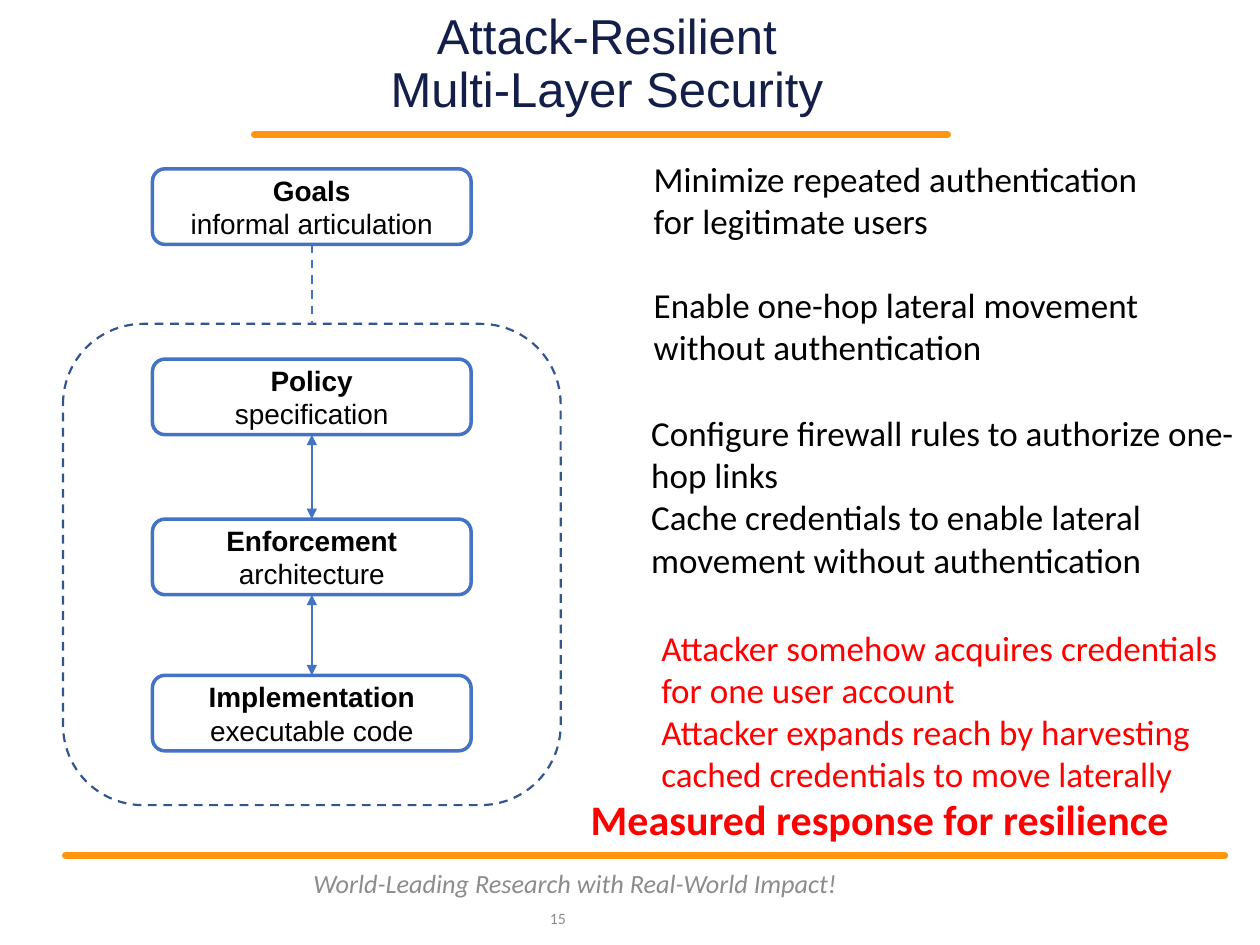
from itertools import pairwise

from lxml.etree import SubElement
from pptx import Presentation
from pptx.dml.color import RGBColor
from pptx.enum.dml import MSO_LINE
from pptx.enum.shapes import MSO_CONNECTOR, MSO_SHAPE
from pptx.enum.text import MSO_ANCHOR, PP_ALIGN
from pptx.oxml.ns import qn
from pptx.util import Inches, Pt

ORANGE = RGBColor(0xFF, 0x95, 0x0E)
NAVY = RGBColor(0x13, 0x1F, 0x49)
BLUE = RGBColor(0x44, 0x72, 0xC4)
DARK_BLUE = RGBColor(0x32, 0x54, 0x91)
GRAY = RGBColor(0x8C, 0x8C, 0x8C)
BLACK = RGBColor(0, 0, 0)
RED = RGBColor(0xFF, 0, 0)

LAYERS = [
    (1.34, "Goals", "informal articulation"),
    (2.85, "Policy", "specification"),
    (4.12, "Enforcement", "architecture"),
    (5.36, "Implementation", "executable code"),
]
NOTES = [
    (5.09, 1.2, 4.14, 0.77, BLACK,
     "Minimize repeated authentication for legitimate users"),
    (5.09, 2.2, 4.14, 0.77, BLACK,
     "Enable one-hop lateral movement without authentication"),
    (5.07, 3.22, 4.86, 1.45, BLACK,
     "Configure firewall rules to authorize one-hop links\n"
     "Cache credentials to enable lateral movement without authentication"),
    (5.15, 4.92, 4.63, 1.45, RED,
     "Attacker somehow acquires credentials for one user account\n"
     "Attacker expands reach by harvesting cached credentials to move laterally"),
]


def write(tf, text, size=20, font="Calibri", color=BLACK, bold=False, heading=False,
          italic=False, align=PP_ALIGN.LEFT, spacing=None):
    """Fill a text frame with one paragraph per line of text."""
    for i, line in enumerate(text.split("\n")):
        p = tf.add_paragraph() if i else tf.paragraphs[0]
        p.alignment = align
        if spacing:
            p.line_spacing = spacing
        r = p.add_run()
        r.text = line
        r.font.size = Pt(size)
        r.font.name = font
        r.font.color.rgb = color
        r.font.bold = bold or (heading and i == 0)
        r.font.italic = italic


class SlideBuilder:
    """Draws the slide's elements in one shared style."""

    def __init__(self, s):
        self.s = s

    def text(self, x, y, w, h, text, anchor=MSO_ANCHOR.TOP, wrap=True, inset=None, **style):
        """Add a text box."""
        sp = self.s.shapes.add_textbox(Inches(x), Inches(y), Inches(w), Inches(h))
        tf = sp.text_frame
        tf.word_wrap = wrap
        tf.vertical_anchor = anchor
        if inset is not None:
            tf.margin_left = tf.margin_right = tf.margin_top = tf.margin_bottom = Inches(inset)
        write(tf, text, **style)

    def box(self, x, y, w, h, color=BLUE, width=2, dash=None, text=None):
        """Add an unfilled rounded box."""
        sp = self.s.shapes.add_shape(
            MSO_SHAPE.ROUNDED_RECTANGLE, Inches(x), Inches(y), Inches(w), Inches(h))
        sp.shadow.inherit = False
        sp.fill.background()
        sp.line.color.rgb = color
        sp.line.width = Pt(width)
        sp.line.dash_style = dash
        if text:
            sp.text_frame.word_wrap = True
            sp.text_frame.vertical_anchor = MSO_ANCHOR.MIDDLE
            write(sp.text_frame, text, size=16, font="Arial", heading=True,
                  align=PP_ALIGN.CENTER)
        return sp

    def line(self, x1, y1, x2, y2, color=BLUE, width=1.25, dash=None):
        """Add a straight line."""
        c = self.s.shapes.add_connector(
            MSO_CONNECTOR.STRAIGHT, Inches(x1), Inches(y1), Inches(x2), Inches(y2))
        c.line.color.rgb = color
        c.line.width = Pt(width)
        c.line.dash_style = dash
        SubElement(c._element.spPr, qn("a:effectLst"))
        return c

    def rule(self, x1, x2, y):
        """Add a thick orange rule with round ends."""
        c = self.line(x1, y, x2, y, ORANGE, 4)
        c.get_or_add_ln().set("cap", "rnd")

    def link(self, upper, lower, end_site=0, arrows=True, dash=None):
        """Join the bottom of one box to the top of the next."""
        c = self.line(0, 0, 0, 0, dash=dash)
        c.begin_connect(upper, 2)
        c.end_connect(lower, end_site)
        if arrows:
            for tag in ("a:headEnd", "a:tailEnd"):
                SubElement(c.get_or_add_ln(), qn(tag), type="triangle")


def main():
    """Build and save the slide."""
    prs = Presentation()
    prs.slide_width, prs.slide_height = Inches(10), Inches(7.5)
    b = SlideBuilder(prs.slides.add_slide(prs.slide_layouts[6]))

    b.rule(2.02, 7.52, 1.07)
    b.rule(0.52, 9.72, 6.79)
    b.text(2.38, 6.81, 4.37, 0.4, "World-Leading Research with Real-World Impact!",
           anchor=MSO_ANCHOR.MIDDLE, size=15, color=GRAY, italic=True, align=PP_ALIGN.CENTER)
    b.text(4.19, 7.09, 0.4, 0.4, "15", anchor=MSO_ANCHOR.MIDDLE, size=9, color=GRAY,
           align=PP_ALIGN.RIGHT)
    b.text(2.19, 0.26, 5.25, 0.51, "Attack-Resilient\nMulti-Layer Security",
           anchor=MSO_ANCHOR.MIDDLE, inset=0, size=28, font="Arial", color=NAVY,
           align=PP_ALIGN.CENTER, spacing=0.9)

    goals, *layers = [b.box(1.21, y, 2.53, 0.6, text=f"{name}\n{detail}")
                      for y, name, detail in LAYERS]
    frame = b.box(0.5, 2.57, 3.95, 3.82, DARK_BLUE, 1.25, MSO_LINE.DASH)
    b.link(goals, frame, arrows=False, dash=MSO_LINE.DASH)
    for upper, lower in pairwise(layers):
        b.link(upper, lower)

    for x, y, w, h, color, text in NOTES:
        b.text(x, y, w, h, text, color=color)
    b.text(4.59, 6.25, 4.84, 0.5, "Measured response for resilience", wrap=False,
           size=24, color=RED, bold=True)
    prs.save("out.pptx")


if __name__ == "__main__":
    main()
